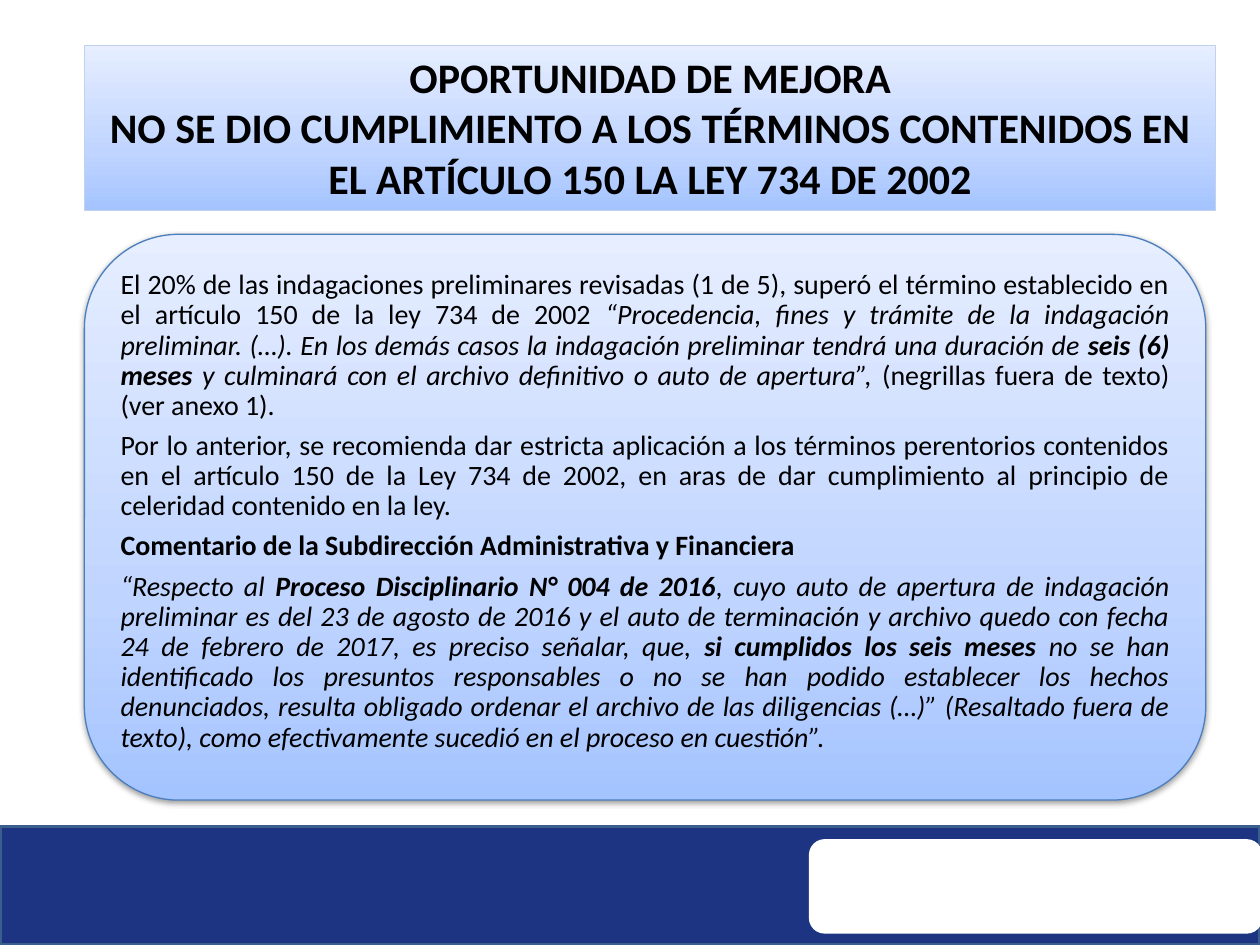
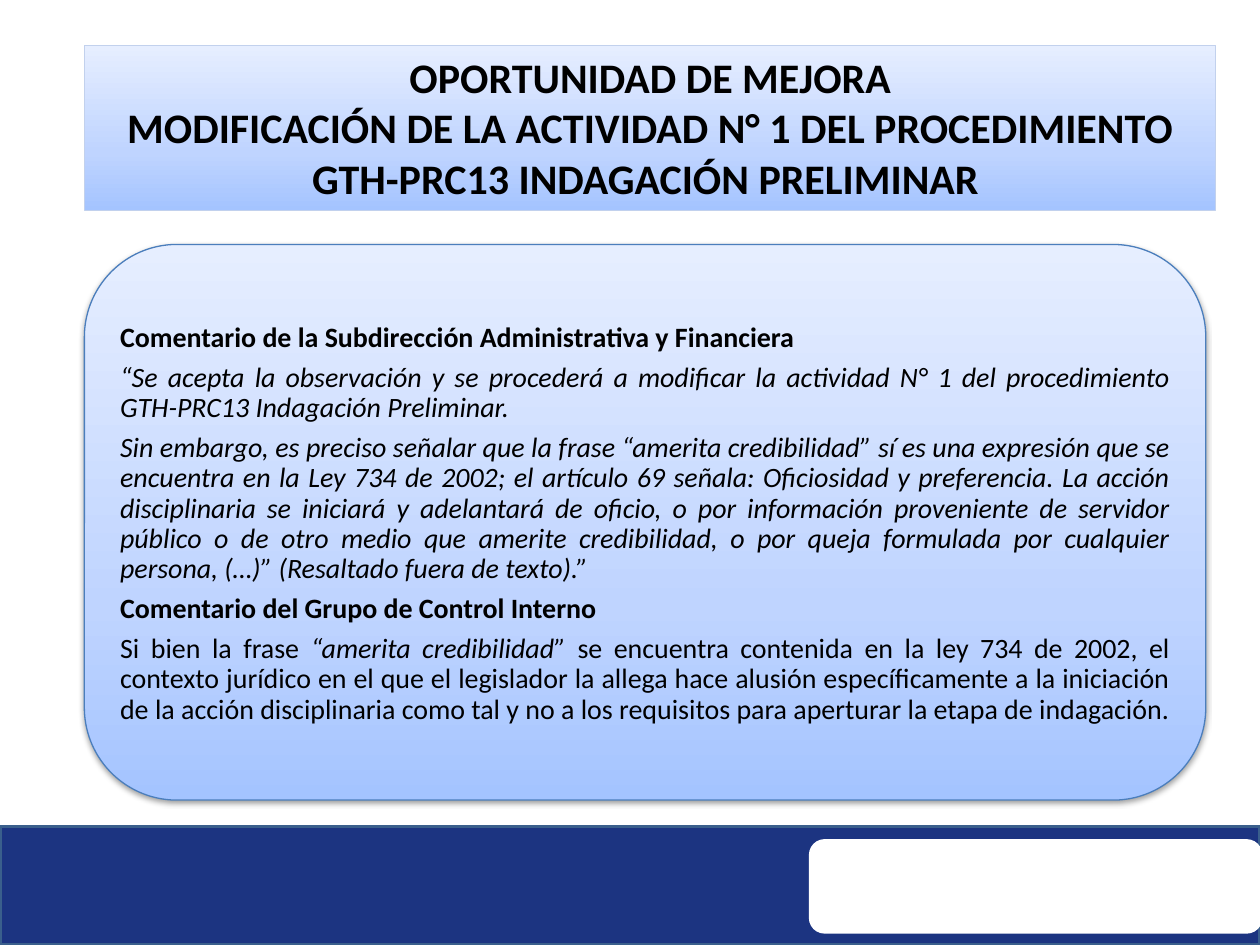
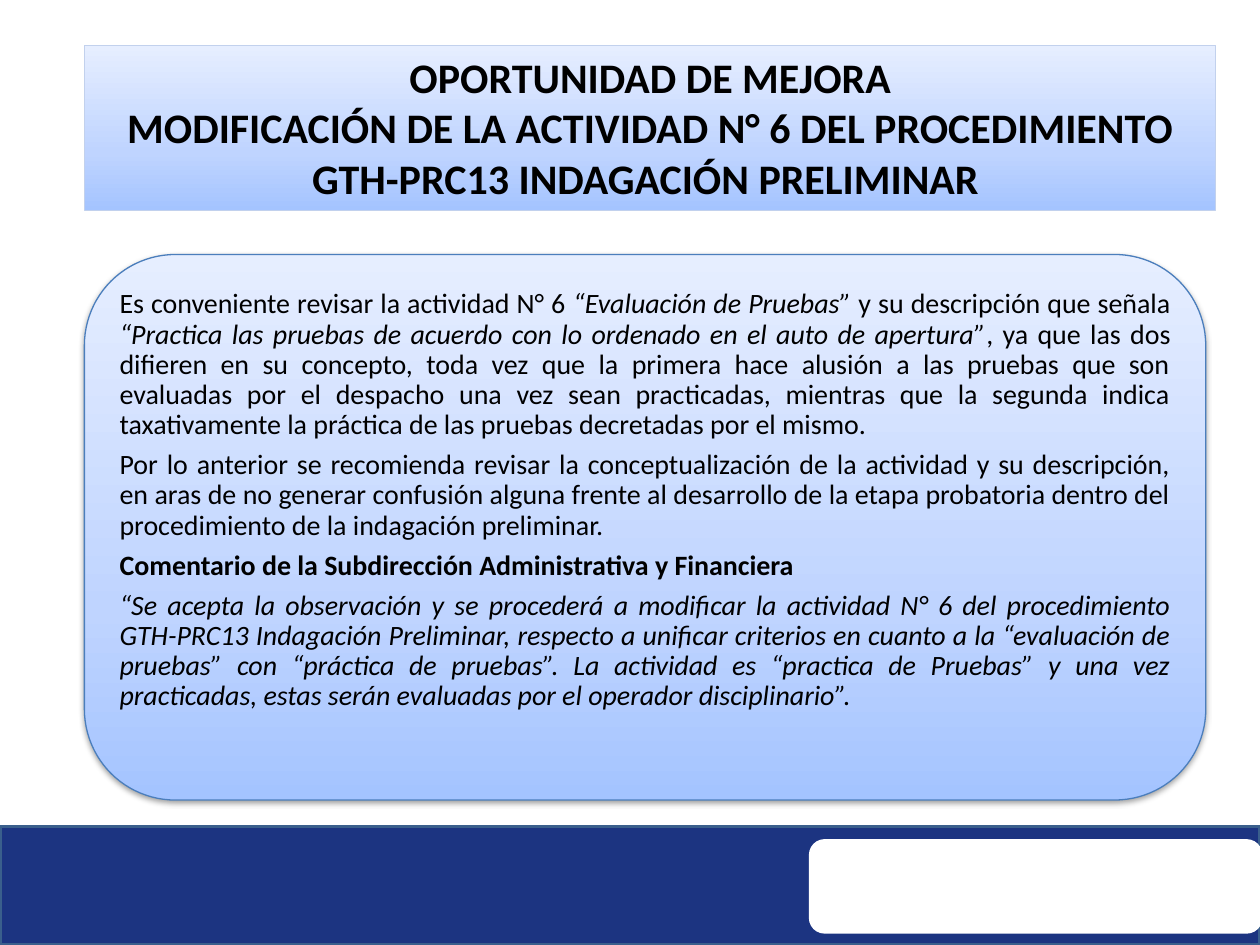
import copy

import pptx
import pptx.dml.color
import pptx.enum.shapes
import pptx.enum.text
import pptx.oxml
import pptx.oxml.ns
import pptx.util

Inches = pptx.util.Inches
Pt = pptx.util.Pt
RGBColor = pptx.dml.color.RGBColor
Align = pptx.enum.text.PP_ALIGN
Anchor = pptx.enum.text.MSO_ANCHOR
AutoSize = pptx.enum.text.MSO_AUTO_SIZE
ShapeKind = pptx.enum.shapes.MSO_SHAPE

BLACK = RGBColor(0x00, 0x00, 0x00)
WHITE = RGBColor(0xFF, 0xFF, 0xFF)
NAVY = RGBColor(0x1C, 0x34, 0x81)
BAND_EDGE = RGBColor(0x3A, 0x5F, 0x8C)
TITLE_EDGE = RGBColor(0xC2, 0xD1, 0xED)
PANEL_EDGE = RGBColor(0x4B, 0x7E, 0xBC)
GRADIENT = [
    (0, RGBColor(0xA4, 0xC4, 0xFF)),
    (0.35, RGBColor(0xBF, 0xD4, 0xFF)),
    (1, RGBColor(0xE6, 0xEE, 0xFF)),
]

FONT = "Calibri"
TITLE_BOX = (0.67, 0.36, 8.98, 1.31)
BAND_BOX = (0, 6.56, 10, 0.94)
PANEL_LEFT, PANEL_WIDTH, PANEL_BOTTOM = 0.67, 8.9, 6.35
CORNER_RATIO = 1 / 6
CORNER_INSET = 0.29
TEXT_MARGIN = 0.07

PANEL_SHADOW = (
    f'<a:effectLst {pptx.oxml.ns.nsdecls("a")}>'
    '<a:outerShdw blurRad="39370" dist="20320" dir="5400000" rotWithShape="0">'
    '<a:srgbClr val="000000"><a:alpha val="38000"/></a:srgbClr>'
    "</a:outerShdw></a:effectLst>"
)

HEADING = "OPORTUNIDAD DE MEJORA"
ADMINISTRATION_COMMENT = [("Comentario de la Subdirección Administrativa y Financiera", "b")]

SLIDES = [
    {
        "title": "NO SE DIO CUMPLIMIENTO A LOS TÉRMINOS CONTENIDOS EN EL ARTÍCULO 150 LA LEY 734 DE 2002",
        "panel_top": 1.86,
        "anchor": Anchor.TOP,
        "margin_top": TEXT_MARGIN,
        "paragraphs": [
            [
                ("El 20% de las indagaciones preliminares revisadas (1 de 5), superó el término "
                 "establecido en el artículo 150 de la ley 734 de 2002 ", ""),
                ("“Procedencia, fines y trámite de la indagación preliminar. (…). En los demás "
                 "casos la indagación preliminar tendrá una duración de ", "i"),
                ("seis (6) meses ", "bi"),
                ("y culminará con el archivo definitivo o auto de apertura”, ", "i"),
                ("(negrillas fuera de texto) (ver anexo 1).", ""),
            ],
            [
                ("Por lo anterior, se recomienda dar estricta aplicación a los términos "
                 "perentorios contenidos en el artículo 150 de la Ley 734 de 2002, en aras de "
                 "dar cumplimiento al principio de celeridad contenido en la ley. ", ""),
            ],
            ADMINISTRATION_COMMENT,
            [
                ("“Respecto al ", "i"),
                ("Proceso Disciplinario N° 004 de 2016", "bi"),
                (", cuyo auto de apertura de indagación preliminar es del 23 de agosto de 2016 "
                 "y el auto de terminación y archivo quedo con fecha 24 de febrero de 2017, es "
                 "preciso señalar, que, ", "i"),
                ("si cumplidos los seis meses", "bi"),
                (" no se han identificado los presuntos responsables o no se han podido "
                 "establecer los hechos denunciados, resulta obligado ordenar el archivo de las "
                 "diligencias (…)” (Resaltado fuera de texto), como efectivamente sucedió en el "
                 "proceso en cuestión”. ", "i"),
            ],
        ],
    },
    {
        "title": "MODIFICACIÓN DE LA ACTIVIDAD N° 1 DEL PROCEDIMIENTO GTH-PRC13 INDAGACIÓN PRELIMINAR ",
        "panel_top": 1.94,
        "anchor": Anchor.MIDDLE,
        "margin_top": 0.1,
        "paragraphs": [
            ADMINISTRATION_COMMENT,
            [
                ("“Se acepta la observación y se procederá a modificar la actividad N° 1 del "
                 "procedimiento GTH-PRC13 Indagación Preliminar. ", "i"),
            ],
            [
                ("Sin embargo, es preciso señalar que la frase “amerita credibilidad” sí es una "
                 "expresión que se encuentra en la Ley 734 de 2002; el artículo 69 señala: "
                 "Oficiosidad y preferencia. La acción disciplinaria se iniciará y adelantará "
                 "de oficio, o por información proveniente de servidor público o de otro medio "
                 "que amerite credibilidad, o por queja formulada por cualquier persona, (…)” "
                 "(Resaltado fuera de texto).”", "i"),
            ],
            [("Comentario del Grupo de Control Interno", "b")],
            [
                ("Si bien la frase ", ""),
                ("“amerita credibilidad” ", "i"),
                ("se encuentra contenida en la ley 734 de 2002, el contexto jurídico en el que "
                 "el legislador la allega hace alusión específicamente a la iniciación de la "
                 "acción disciplinaria como tal y no a los requisitos para aperturar la etapa "
                 "de indagación. ", ""),
            ],
        ],
    },
    {
        "title": "MODIFICACIÓN DE LA ACTIVIDAD N° 6 DEL PROCEDIMIENTO GTH-PRC13 INDAGACIÓN PRELIMINAR ",
        "panel_top": 2.02,
        "anchor": Anchor.TOP,
        "margin_top": TEXT_MARGIN,
        "paragraphs": [
            [
                ("Es conveniente revisar la actividad N° 6 ", ""),
                ("“Evaluación de Pruebas” ", "i"),
                ("y su descripción que señala ", ""),
                ("“Practica las pruebas de acuerdo con lo ordenado en el auto de apertura”", "i"),
                (", ya que las dos difieren en su concepto, toda vez que la primera hace alusión "
                 "a las pruebas que son evaluadas por el despacho una vez sean practicadas, "
                 "mientras que la segunda indica taxativamente la práctica de las pruebas "
                 "decretadas por el mismo.", ""),
            ],
            [
                ("Por lo anterior se recomienda revisar la conceptualización de la actividad y "
                 "su descripción, en aras de no generar confusión alguna frente al desarrollo "
                 "de la etapa probatoria dentro del procedimiento de la indagación preliminar.", ""),
            ],
            ADMINISTRATION_COMMENT,
            [
                ("“Se acepta la observación y se procederá a modificar la actividad N° 6 del "
                 "procedimiento GTH-PRC13 Indagación Preliminar, respecto a unificar criterios "
                 "en cuanto a la “evaluación de pruebas” con “práctica de pruebas”. La actividad "
                 "es “practica de Pruebas” y una vez practicadas, estas serán evaluadas por el "
                 "operador disciplinario”. ", "i"),
            ],
        ],
    },
]


def add_box(slide, kind, box, fill=None, edge=None, edge_width=0.75):
    """Add a shadowless shape with a solid fill, or the shared gradient when fill is None."""
    shape = slide.shapes.add_shape(kind, *map(Inches, box))
    shape.shadow.inherit = False
    if fill is None:
        apply_gradient(shape)
    else:
        shape.fill.solid()
        shape.fill.fore_color.rgb = fill
    if edge is None:
        shape.line.fill.background()
    else:
        shape.line.color.rgb = edge
        shape.line.width = Pt(edge_width)
    return shape


def apply_gradient(shape):
    """Fill a shape with the shared three-stop gradient, darkest at the bottom."""
    shape.fill.gradient()
    shape.fill.gradient_angle = 90
    stop_list = shape.element.spPr.find(".//" + pptx.oxml.ns.qn("a:gsLst"))
    stop_list.append(copy.deepcopy(stop_list[0]))
    for stop, (position, color) in zip(shape.fill.gradient_stops, GRADIENT):
        stop.position = position
        stop.color.rgb = color


def style_paragraph(paragraph, size, alignment):
    """Set the font and alignment of a paragraph."""
    paragraph.alignment = alignment
    paragraph.font.name = FONT
    paragraph.font.size = Pt(size)
    paragraph.font.color.rgb = BLACK


def add_footer(slide, box):
    """Draw the navy band with its white rounded plate at the right."""
    left, top, width, height = box
    add_box(slide, ShapeKind.RECTANGLE, box, NAVY, BAND_EDGE, 2)
    plate = (left + width - 3.58, top + 0.1, 3.6, 0.75)
    add_box(slide, ShapeKind.ROUNDED_RECTANGLE, plate, WHITE)


def add_title(slide, box, title):
    """Draw the title banner with the shared heading above the slide's own title."""
    banner = add_box(slide, ShapeKind.RECTANGLE, box, edge=TITLE_EDGE)
    frame = banner.text_frame
    frame.word_wrap = True
    frame.auto_size = AutoSize.SHAPE_TO_FIT_TEXT
    frame.vertical_anchor = Anchor.TOP
    frame.text = f"{HEADING}\n{title}"
    for paragraph in frame.paragraphs:
        style_paragraph(paragraph, 24, Align.CENTER)
        paragraph.font.bold = True


def add_panel(slide, box, paragraphs, anchor, margin_top):
    """Draw the rounded panel and its justified text, kept clear of the round corners."""
    left, top, width, height = box
    panel = add_box(slide, ShapeKind.ROUNDED_RECTANGLE, box, edge=PANEL_EDGE)
    properties = panel.element.spPr
    properties.replace(
        properties.find(pptx.oxml.ns.qn("a:effectLst")), pptx.oxml.parse_xml(PANEL_SHADOW)
    )
    inset = CORNER_INSET * CORNER_RATIO * height
    text_box = slide.shapes.add_textbox(
        Inches(left + inset), Inches(top + inset),
        Inches(width - 2 * inset), Inches(height - 2 * inset),
    )
    frame = text_box.text_frame
    frame.word_wrap = True
    frame.vertical_anchor = anchor
    frame.margin_left = frame.margin_right = frame.margin_bottom = Inches(TEXT_MARGIN)
    frame.margin_top = Inches(margin_top)
    for index, runs in enumerate(paragraphs):
        paragraph = frame.add_paragraph() if index else frame.paragraphs[0]
        style_paragraph(paragraph, 16, Align.JUSTIFY)
        paragraph.line_spacing = 0.9
        paragraph.space_after = Pt(5.6)
        for text, style in runs:
            run = paragraph.add_run()
            run.text = text
            font = paragraph.font if len(runs) == 1 else run.font
            font.bold = "b" in style
            font.italic = "i" in style


def add_finding_slide(presentation, content):
    """Add one slide with footer, title banner and text panel."""
    slide = presentation.slides.add_slide(presentation.slide_layouts[6])
    add_footer(slide, BAND_BOX)
    add_title(slide, TITLE_BOX, content["title"])
    top = content["panel_top"]
    panel_box = (PANEL_LEFT, top, PANEL_WIDTH, PANEL_BOTTOM - top)
    add_panel(slide, panel_box, content["paragraphs"], content["anchor"], content["margin_top"])


def main():
    """Build and save the presentation."""
    presentation = pptx.Presentation()
    presentation.slide_width = Inches(10)
    presentation.slide_height = Inches(7.5)
    for content in SLIDES:
        add_finding_slide(presentation, content)
    presentation.save("out.pptx")


if __name__ == "__main__":
    main()
